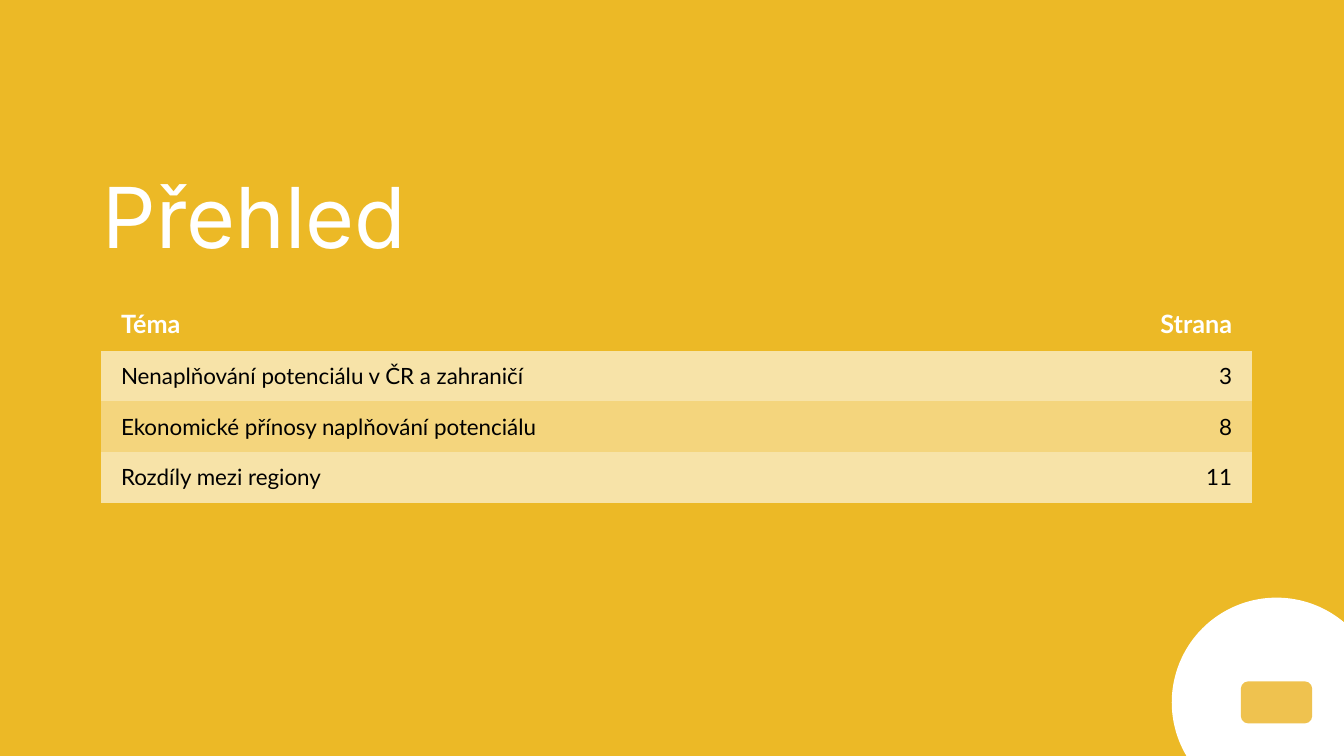
from pptx import Presentation
from pptx.dml.color import RGBColor
from pptx.enum.shapes import MSO_SHAPE
from pptx.enum.text import MSO_ANCHOR, PP_ALIGN
from pptx.util import Cm, Pt

GOLD = RGBColor(0xEC, 0xB9, 0x26)
BADGE_GOLD = RGBColor(0xEF, 0xC2, 0x4F)
LIGHT_BAND = RGBColor(0xF7, 0xE3, 0xA8)
DARK_BAND = RGBColor(0xF4, 0xD5, 0x7D)
WHITE = RGBColor(0xFF, 0xFF, 0xFF)
BLACK = RGBColor(0, 0, 0)

TOPICS = [
    ("Téma", "Strana"),
    ("Nenaplňování potenciálu v ČR a zahraničí", "3"),
    ("Ekonomické přínosy naplňování potenciálu", "8"),
    ("Rozdíly mezi regiony", "11"),
]


def add_run(p, text, font, size, color, bold=False):
    """Append a formatted run to a paragraph."""
    r = p.add_run()
    r.text = text
    r.font.name = font
    r.font.size = Pt(size)
    r.font.bold = bold
    r.font.color.rgb = color


def add_plain_shape(slide, kind, x, y, w, h, color):
    """Add a filled shape without outline or shadow."""
    sp = slide.shapes.add_shape(kind, Cm(x), Cm(y), Cm(w), Cm(h))
    sp.shadow.inherit = False
    sp.fill.solid()
    sp.fill.fore_color.rgb = color
    sp.line.fill.background()


def add_badge(slide, x, y, size):
    """Place the white corner disc with a plain mark inside it."""
    add_plain_shape(slide, MSO_SHAPE.OVAL, x, y, size, size, WHITE)
    add_plain_shape(slide, MSO_SHAPE.ROUNDED_RECTANGLE,
                    x + 0.33 * size, y + 0.4 * size,
                    0.34 * size, 0.2 * size, BADGE_GOLD)


def add_title(slide, x, y, w, h):
    """Place the slide title at the bottom of its box."""
    tf = slide.shapes.add_textbox(Cm(x), Cm(y), Cm(w), Cm(h)).text_frame
    tf.word_wrap = True
    tf.vertical_anchor = MSO_ANCHOR.BOTTOM
    tf.margin_left = tf.margin_right = Cm(0.25)
    tf.margin_top, tf.margin_bottom = Cm(0.13), Cm(0.4)
    add_run(tf.paragraphs[0], "Přehled", "Inter", 60, WHITE)


def add_contents_table(slide, x, y, w, h):
    """Place the banded table of topics and page numbers."""
    header_h = 1.35
    row_h = (h - header_h) / (len(TOPICS) - 1)
    table = slide.shapes.add_table(len(TOPICS), 2, Cm(x), Cm(y), Cm(w), Cm(h)).table
    table.columns[0].width = Cm(0.66 * w)
    table.columns[1].width = Cm(0.34 * w)
    for i, topic in enumerate(TOPICS):
        header = i == 0
        table.rows[i].height = Cm(header_h if header else row_h)
        band = GOLD if header else (DARK_BAND, LIGHT_BAND)[i % 2]
        for cell, text, align in zip(table.rows[i].cells, topic,
                                     (PP_ALIGN.LEFT, PP_ALIGN.RIGHT)):
            cell.fill.solid()
            cell.fill.fore_color.rgb = band
            cell.margin_left = cell.margin_right = Cm(0.5)
            cell.margin_top = cell.margin_bottom = Cm(0.3)
            p = cell.text_frame.paragraphs[0]
            p.alignment = align
            add_run(p, text, "Lato", 18 if header else 16,
                    WHITE if header else BLACK, header)
    table.first_row = table.horz_banding = False
    table_style = table._tbl.tblPr.find("{*}tableStyleId")
    table_style.text = "{2D5ABB26-0587-4C30-8999-92F81FD0307C}"


def main():
    """Build the overview slide and save it."""
    prs = Presentation()
    prs.slide_width, prs.slide_height = Cm(33.87), Cm(19.05)
    slide = prs.slides.add_slide(prs.slide_layouts[6])
    slide.background.fill.solid()
    slide.background.fill.fore_color.rgb = GOLD
    add_badge(slide, 29.53, 15.06, 5.28)
    add_title(slide, 2.34, 1.02, 29.21, 6.07)
    add_contents_table(slide, 2.55, 7.47, 29, 5.18)
    prs.save("out.pptx")


if __name__ == "__main__":
    main()
